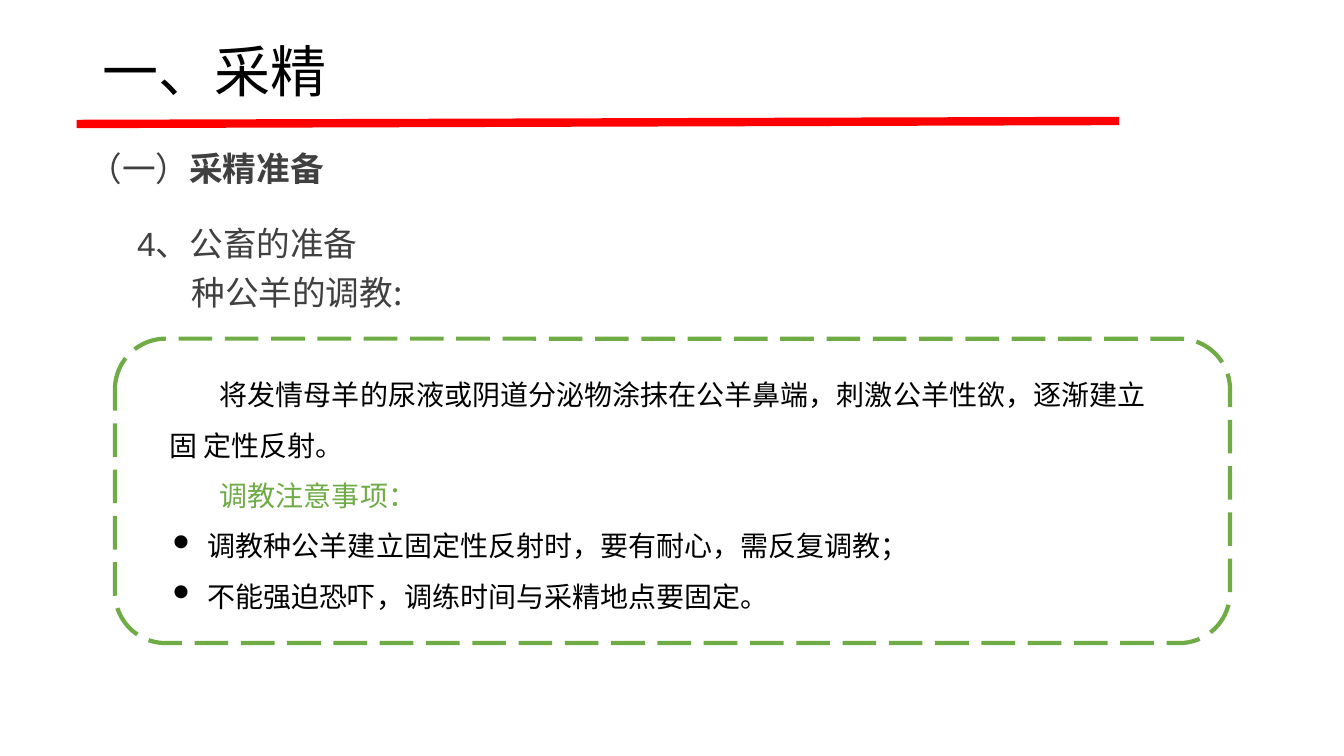
from dataclasses import dataclass

from lxml.etree import SubElement
from pptx import Presentation
from pptx.dml.color import RGBColor
from pptx.enum.dml import MSO_LINE
from pptx.enum.shapes import MSO_CONNECTOR, MSO_SHAPE
from pptx.enum.text import MSO_ANCHOR
from pptx.oxml.ns import qn
from pptx.slide import Slide
from pptx.util import Inches, Pt

BLACK = RGBColor(0x00, 0x00, 0x00)
GRAY = RGBColor(0x40, 0x40, 0x40)
GREEN = RGBColor(0x6F, 0xAC, 0x46)
RED = RGBColor(0xFF, 0x00, 0x00)
CJK = "Noto Sans CJK SC"


@dataclass(frozen=True)
class Span:
    text: str
    size: float
    color: RGBColor
    bold: bool = False
    font: str = CJK


@dataclass(frozen=True)
class Para:
    spans: list[Span]
    margin: float = 0
    indent: float = 0
    bullet: str = ""
    line_spacing: float | Pt = 1.0


@dataclass(frozen=True)
class Block:
    left: float
    top: float
    width: float
    height: float
    paras: list[Para]
    inset_x: float = 0
    inset_y: float = 0
    anchor: MSO_ANCHOR = MSO_ANCHOR.TOP


def add_block(slide: Slide, block: Block) -> None:
    box = slide.shapes.add_textbox(Inches(block.left), Inches(block.top),
                                   Inches(block.width), Inches(block.height))
    frame = box.text_frame
    frame.word_wrap = True
    frame.vertical_anchor = block.anchor
    frame.margin_left = frame.margin_right = Inches(block.inset_x)
    frame.margin_top = frame.margin_bottom = Inches(block.inset_y)
    for number, para in enumerate(block.paras):
        paragraph = frame.add_paragraph() if number else frame.paragraphs[0]
        paragraph.line_spacing = para.line_spacing
        properties = paragraph._p.get_or_add_pPr()
        properties.set("marL", str(Inches(para.margin)))
        properties.set("indent", str(Inches(para.indent)))
        if para.bullet:
            SubElement(properties, qn("a:buChar"), char=para.bullet)
        for span in para.spans:
            run = paragraph.add_run()
            run.text = span.text
            run.font.size = Pt(span.size)
            run.font.bold = span.bold
            run.font.color.rgb = span.color
            run.font.name = span.font
            SubElement(run._r.get_or_add_rPr(), qn("a:ea"), typeface=CJK)


def add_title_rule(slide: Slide) -> None:
    rule = slide.shapes.add_connector(MSO_CONNECTOR.STRAIGHT, Inches(0.76), Inches(1.23),
                                      Inches(11.1), Inches(1.2))
    rule.line.color.rgb = RED
    rule.line.width = Pt(6)
    SubElement(rule._element.spPr, qn("a:effectLst"))


def add_training_frame(slide: Slide) -> None:
    frame = slide.shapes.add_shape(MSO_SHAPE.ROUNDED_RECTANGLE, Inches(1.14), Inches(3.36),
                                   Inches(11.06), Inches(3.02))
    frame.shadow.inherit = False
    frame.fill.background()
    frame.line.color.rgb = GREEN
    frame.line.width = Pt(3)
    frame.line.dash_style = MSO_LINE.LONG_DASH


def body(text: str, color: RGBColor = BLACK, margin: float = 0.01,
         indent: float = 0, bullet: str = "") -> Para:
    return Para([Span(text, 20, color)], margin, indent, bullet, Pt(36))


def precaution(text: str) -> Para:
    return body(text, margin=0.39, indent=-0.38, bullet="⚫")


TITLE = Block(0.92, 0.01, 11.5, 1.45,
              [Para([Span("一、采精", 40, BLACK)], line_spacing=0.9)],
              0.1, 0.05, MSO_ANCHOR.MIDDLE)
SECTION = Block(0.63, 1.42, 10.62, 0.62,
                [Para([Span("（一）", 24, GRAY), Span("采精准备", 24, GRAY, bold=True)],
                      margin=0.15)], 0.1, 0.05)
TOPIC = Block(1.35, 2.21, 2.88, 0.42,
              [Para([Span("4", 24, GRAY, font="Arial"), Span("、公畜的准备", 24, GRAY)], 0.01)])
SUBTOPIC = Block(1.89, 2.7, 2.55, 0.43, [Para([Span("种公羊的调教:", 24, GRAY)], 0.01)])
TRAINING = Block(1.67, 3.58, 9.85, 2.53, [
    body("将发情母羊的尿液或阴道分泌物涂抹在公羊鼻端，刺激公羊性欲，逐渐建立固 定性反射。",
         indent=0.5),
    body("调教注意事项：", GREEN, margin=0.51),
    precaution("调教种公羊建立固定性反射时，要有耐心，需反复调教；"),
    precaution("不能强迫恐吓，调练时间与采精地点要固定。"),
])


def main() -> None:
    presentation = Presentation()
    presentation.slide_width = Inches(13.33)
    presentation.slide_height = Inches(7.5)
    slide = presentation.slides.add_slide(presentation.slide_layouts[6])

    # Headings
    for heading in (SUBTOPIC, SECTION, TOPIC):
        add_block(slide, heading)
    add_title_rule(slide)
    add_block(slide, TITLE)

    # Ram training notes in the dashed frame
    add_training_frame(slide)
    add_block(slide, TRAINING)

    presentation.save("out.pptx")


if __name__ == "__main__":
    main()
